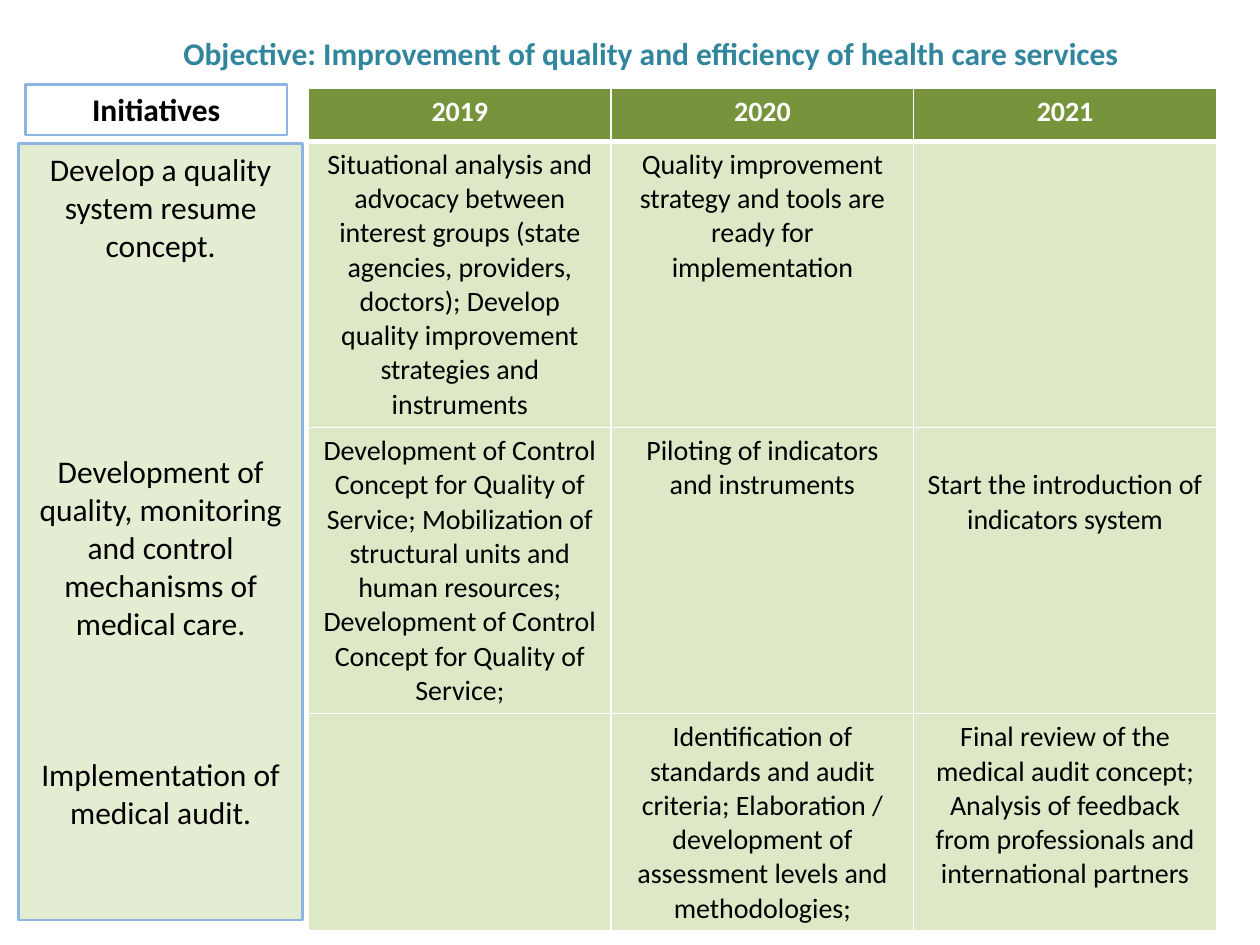
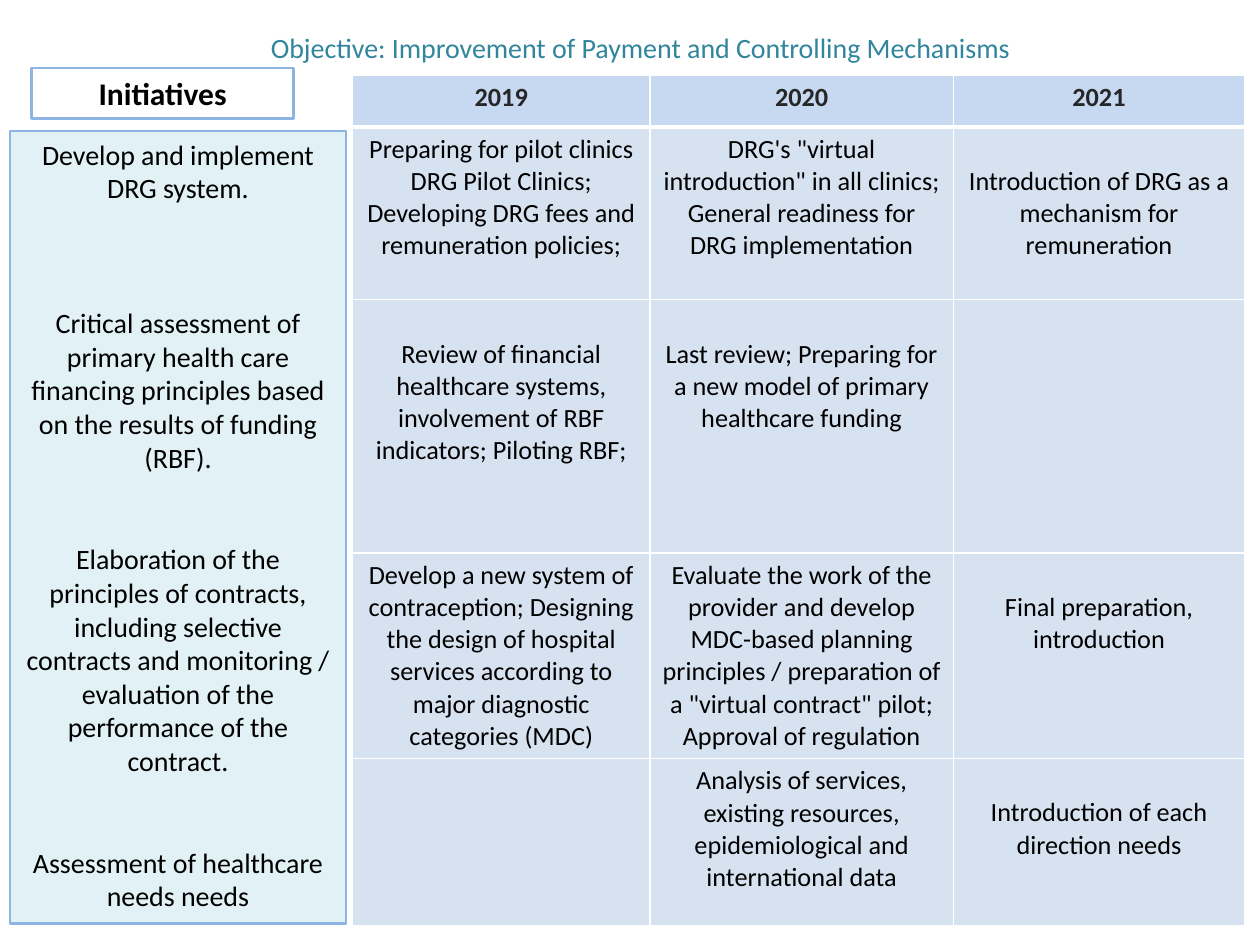
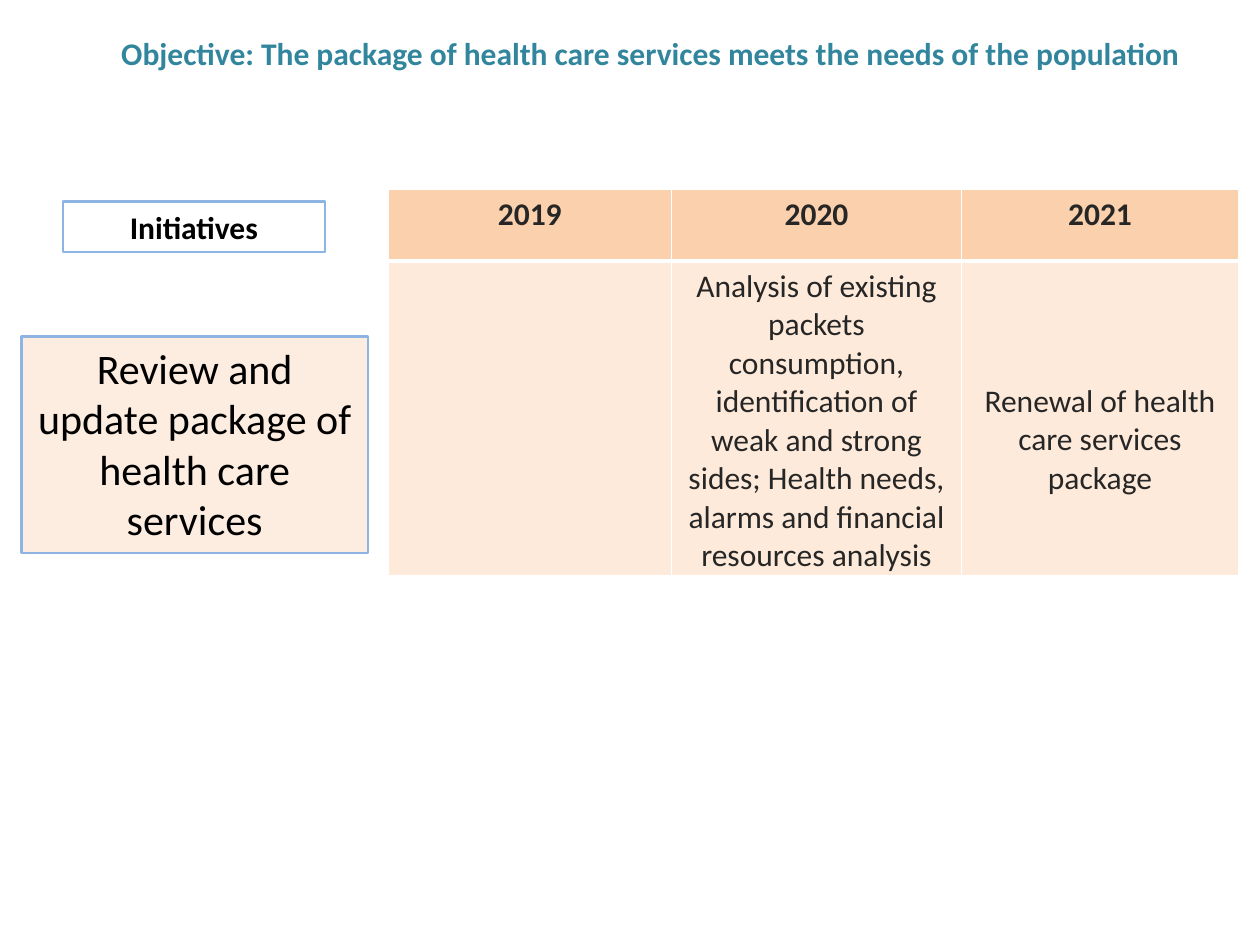
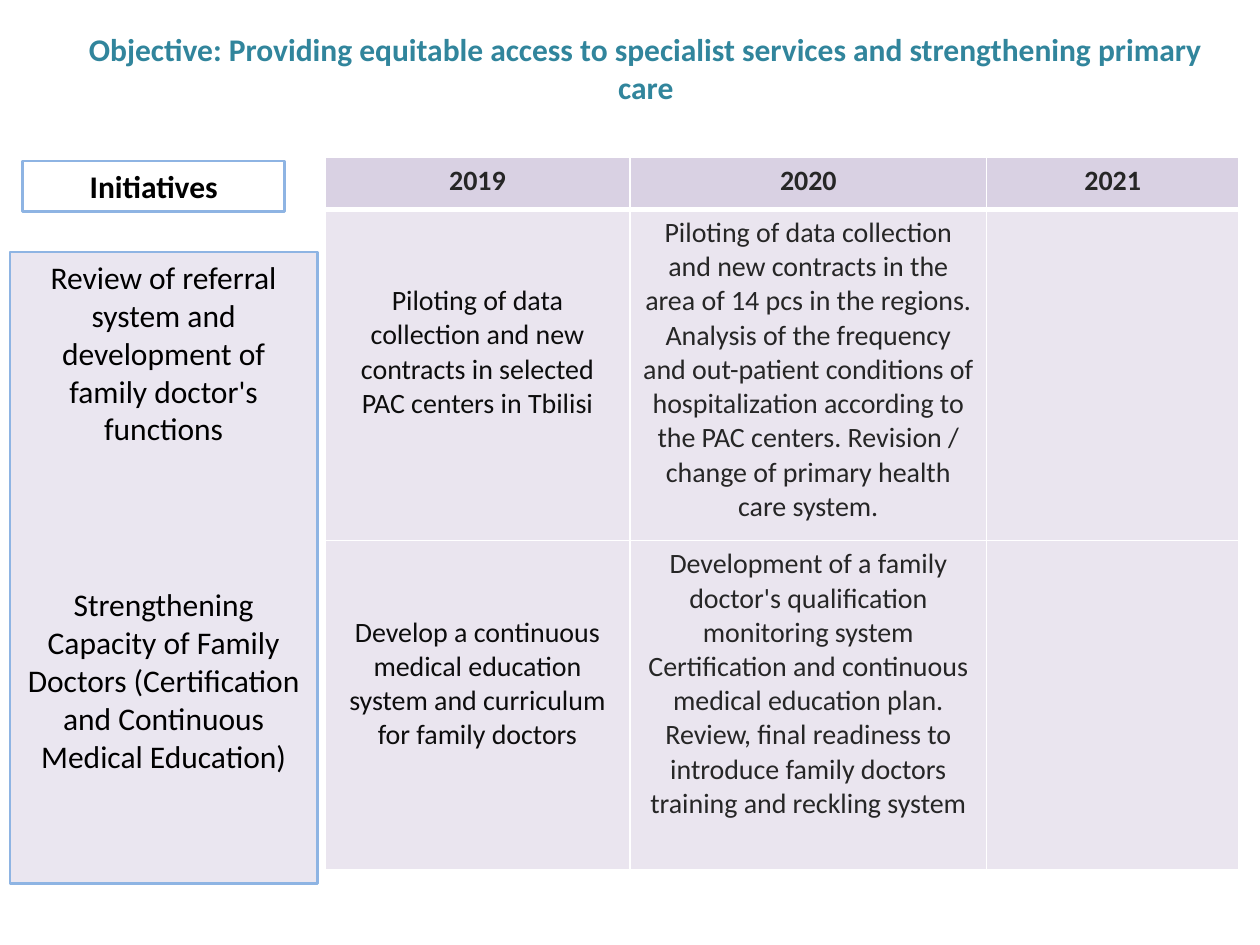
import pptx
import pptx.util
import pptx.dml.color
import pptx.enum.shapes
import pptx.enum.text
import pptx.oxml
import pptx.oxml.ns
from pptx.util import Cm

FONT = "Calibri"
TEAL = "31859C"
EDGE = "8EB4E3"
WHITE = "FFFFFF"
BLACK = "000000"
DARK = "262626"
YEARS = ["2019", "2020", "2021"]
LINE = 0.043


def color(code):
    return pptx.dml.color.RGBColor.from_string(code)


def paint(fill, code, alpha=100):
    fill.solid()
    fill.fore_color.rgb = color(code)
    if alpha < 100:
        tint = fill._xPr.find(".//" + pptx.oxml.ns.qn("a:srgbClr"))
        node = pptx.oxml.parse_xml(
            f'<a:alpha {pptx.oxml.ns.nsdecls("a")} val="{alpha * 1000}"/>')
        tint.append(node)


class Deck:
    def __init__(self):
        self.show = pptx.Presentation()
        self.show.slide_width = Cm(25.4)
        self.show.slide_height = Cm(19.05)
        self.slide = None

    def page(self):
        self.slide = self.show.slides.add_slide(self.show.slide_layouts[6])

    def words(self, frame, text, size, ink, bold=False, gaps=()):
        frame.word_wrap = True
        frame.text = text
        for para, gap in zip(frame.paragraphs, [0, *gaps] + [0] * 9):
            para.alignment = pptx.enum.text.PP_ALIGN.CENTER
            para.space_before = pptx.util.Pt(gap)
            para.font.name = FONT
            para.font.size = pptx.util.Pt(size)
            para.font.bold = bold
            para.font.color.rgb = color(ink)

    def title(self, text, area, size=18, bold=True):
        box = self.slide.shapes.add_textbox(*map(Cm, area))
        self.words(box.text_frame, text, size, TEAL, bold)
        box.text_frame.vertical_anchor = pptx.enum.text.MSO_ANCHOR.MIDDLE

    def box(self, text, area, size, tint=None, bold=False, gaps=()):
        rect = self.slide.shapes.add_shape(
            pptx.enum.shapes.MSO_SHAPE.RECTANGLE, *map(Cm, area))
        rect.shadow.inherit = False
        if tint:
            paint(rect.fill, *tint)
        else:
            rect.fill.background()
        rect.line.color.rgb = color(EDGE)
        rect.line.width = pptx.util.Pt(1.5)
        self.words(rect.text_frame, text, size, BLACK, bold, gaps)
        rect.text_frame.vertical_anchor = pptx.enum.text.MSO_ANCHOR.TOP

    def label(self, left, top):
        self.box("Initiatives", (left, top, 5.28, 1.02), 18, bold=True)

    def edges(self, cell, row):
        widths = {"L": 1, "R": 1, "T": 3 if row == 1 else 1,
                  "B": 3 if row == 0 else 1}
        props = cell._tc.get_or_add_tcPr()
        for spot, (side, width) in enumerate(widths.items()):
            props.insert(spot, pptx.oxml.parse_xml(
                f'<a:ln{side} {pptx.oxml.ns.nsdecls("a")} w="{pptx.util.Pt(width)}">'
                f'<a:solidFill><a:srgbClr val="{WHITE}"/></a:solidFill>'
                f'</a:ln{side}>'))

    def table(self, spot, cols, rows, body, size, head, tint, top, inks):
        grid = self.slide.shapes.add_table(
            len(rows), len(cols), *map(Cm, (*spot, sum(cols), sum(rows)))).table
        for col, width in zip(grid.columns, cols):
            col.width = Cm(width)
        for row, height in zip(grid.rows, rows):
            row.height = Cm(height)
        for i, line in enumerate([YEARS, *body]):
            for j, item in enumerate(line):
                skip, text = item if isinstance(item, tuple) else (0, item)
                cell = grid.cell(i, j)
                cell.margin_top = Cm(0.13 + LINE * size * skip)
                ink = inks[j] if i else top
                self.words(cell.text_frame, text, size, ink, i == 0)
                paint(cell.fill, *(tint if i else head))
                self.edges(cell, i)


def quality(deck):
    deck.page()
    deck.title("Objective: Improvement of quality and efficiency of health care services",
               (1.7, 0.43, 22.86, 1.27))
    body = [
        ["Situational analysis and advocacy between interest groups (state agencies, "
         "providers, doctors); Develop quality improvement strategies and instruments",
         "Quality improvement strategy and tools are ready for implementation", ""],
        ["Development of Control Concept for Quality of Service; Mobilization of "
         "structural units and human resources; Development of Control Concept for "
         "Quality of Service;",
         "Piloting of indicators and instruments",
         (1, "Start the introduction of indicators system")],
        ["",
         "Identification of standards and audit criteria; Elaboration / development "
         "of assessment levels and methodologies;",
         "Final review of the medical audit concept; Analysis of feedback from "
         "professionals and international partners"],
    ]
    deck.table((6.22, 1.78), [6.1] * 3, [1.07, 5.77, 5.77, 4.37], body, 16,
               ("77933C",), ("D7E4BD", 84), WHITE, [BLACK] * 3)
    deck.box("Develop a quality system resume concept.\n"
             "Development of quality, monitoring and control mechanisms of medical care.\n"
             "Implementation of medical audit.",
             (0.38, 2.9, 5.72, 15.65), 18, ("D7E4BD", 67), gaps=(108, 65))
    deck.label(0.51, 1.7)


def payment(deck):
    deck.page()
    body = [
        ["Preparing for pilot clinics DRG Pilot Clinics; Developing DRG fees and "
         "remuneration policies;",
         "DRG's \"virtual introduction\" in all clinics; General readiness for DRG "
         "implementation",
         (1, "Introduction of DRG as a mechanism for remuneration")],
        [(1, "Review of financial healthcare systems, involvement of RBF indicators; "
             "Piloting RBF;"),
         (1, "Last review; Preparing for a new model of primary healthcare funding"), ""],
        ["Develop a new system of contraception; Designing the design of hospital "
         "services according to major diagnostic categories (MDC)",
         "Evaluate the work of the provider and develop MDC-based planning principles "
         "/ preparation of a \"virtual contract\" pilot; Approval of regulation",
         (1, "Final preparation, introduction")],
        ["",
         "Analysis of services, existing resources, epidemiological and international data",
         (1, "Introduction of each direction needs")],
    ]
    deck.table((7.11, 1.52), [5.99, 6.12, 5.87], [1.04, 3.48, 5.11, 4.14, 3.38], body,
               15, ("C6D9F1",), ("B9CDE5", 56), DARK, [BLACK] * 3)
    deck.box("Develop and implement DRG system.\n"
             "Critical assessment of primary health care financing principles based on "
             "the results of funding (RBF).\n"
             "Elaboration of the principles of contracts, including selective contracts "
             "and monitoring / evaluation of the performance of the contract.\n"
             "Assessment of healthcare needs needs",
             (0.2, 2.64, 6.78, 15.98), 16, ("B7DEE8", 41), gaps=(58, 39, 39))
    deck.title("Objective: Improvement of Payment and Controlling Mechanisms",
               (1.7, 0.48, 22.43, 0.94), 16, False)
    deck.label(0.64, 1.37)


def package(deck):
    deck.page()
    deck.title("Objective: The package of health care services meets the needs of the "
               "population", (0.84, -0.2, 24.56, 2.54))
    deck.box("Review and update package of health care services",
             (0.43, 6.78, 6.99, 4.37), 24, ("FCD5B5", 41))
    body = [
        ["",
         "Analysis of existing packets consumption, identification of weak and strong "
         "sides; Health needs, alarms and financial resources analysis",
         (3, "Renewal of health care services package")],
    ]
    deck.table((7.82, 3.81), [5.72, 5.84, 5.59], [1.45, 6.35], body, 18,
               ("FAC090", 74), ("FDEADA",), DARK, [DARK] * 3)
    deck.label(1.27, 4.06)


def access(deck):
    deck.page()
    deck.title("Objective: Providing equitable access to specialist services and "
               "strengthening primary care", (1.27, 0.2, 23.5, 2.34))
    deck.box("Review of referral system and development of family doctor's functions\n"
             "Strengthening Capacity of Family Doctors (Certification and Continuous "
             "Medical Education)",
             (0.2, 5.08, 6.2, 12.73), 18, ("CCC1DA", 40), gaps=(79,))
    deck.label(0.46, 3.25)
    body = [
        [(2, "Piloting of data collection and new contracts in selected PAC centers "
             "in Tbilisi"),
         "Piloting of data collection and new contracts in the area of 14 pcs in the "
         "regions.\nAnalysis of the frequency and out-patient conditions of "
         "hospitalization according to the PAC centers. Revision / change of primary "
         "health care system.", ""],
        [(2, "Develop a continuous medical education system and curriculum for family "
             "doctors"),
         "Development of a family doctor's qualification monitoring system "
         "Certification and continuous medical education plan. Review, final readiness "
         "to introduce family doctors training and reckling system", ""],
    ]
    deck.table((6.55, 3.18), [6.15, 7.19, 5.08], [1.04, 6.68, 6.63], body, 16,
               ("B3A2C7", 49), ("E6E0EC", 81), DARK, ["0D0D0D", DARK, DARK])


def main():
    deck = Deck()
    for build in (quality, payment, package, access):
        build(deck)
    deck.show.save("out.pptx")


if __name__ == "__main__":
    main()
